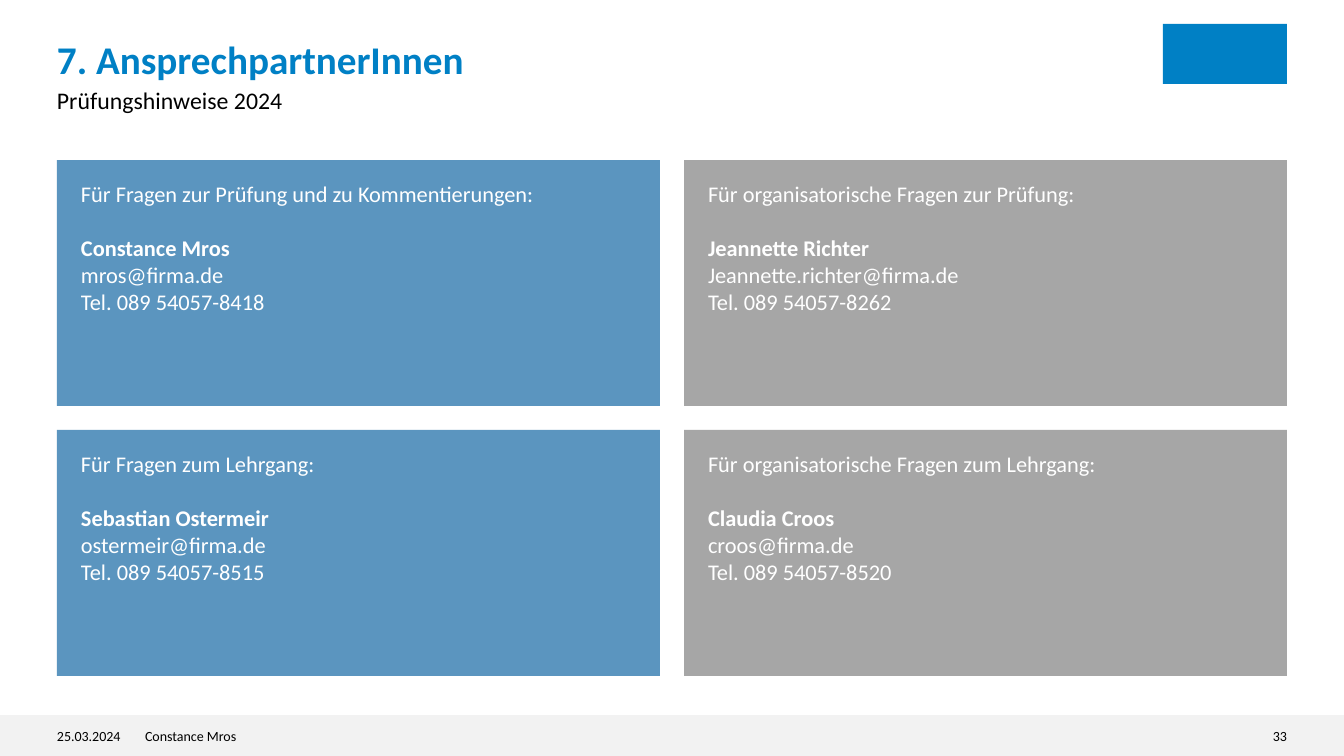
from pptx import Presentation
from pptx import util as u
from pptx.dml.color import RGBColor
from pptx.enum import shapes, text

PX = 12192000 / 1344  # EMU per px
LEFT, RIGHT = 57, 1287
BLUE, CARD_BLUE, CARD_GREY = "0080C5", "5B95BF", "A6A6A6"
CARD_WIDTH, CARD_HEIGHT, CARD_GAP, CARD_TOP = 603, 246, 24, 160

# Two columns per row: heading, name, mail, phone
CONTACTS = [
    [("Für Fragen zur Prüfung und zu Kommentierungen:", "Constance Mros",
      "mros@firma.de", "Tel. 089 54057-8418"),
     ("Für organisatorische Fragen zur Prüfung:", "Jeannette Richter",
      "Jeannette.richter@firma.de", "Tel. 089 54057-8262")],
    [("Für Fragen zum Lehrgang:", "Sebastian Ostermeir",
      "ostermeir@firma.de", "Tel. 089 54057-8515"),
     ("Für organisatorische Fragen zum Lehrgang:", "Claudia Croos",
      "croos@firma.de", "Tel. 089 54057-8520")],
]


def px(*lengths):
    return [u.Emu(round(length * PX)) for length in lengths]


def color(code):
    return RGBColor.from_string(code)


def set_frame(shape, side=0, top=0):
    side, top = px(side, top)
    values = {"margin_left": side, "margin_right": side,
              "margin_top": top, "margin_bottom": top, "word_wrap": True,
              "auto_size": text.MSO_AUTO_SIZE.NONE,
              "vertical_anchor": text.MSO_ANCHOR.TOP}
    for name, value in values.items():
        setattr(shape.text_frame, name, value)


def write(para, words, size, ink="000000", bold=False, **layout):
    span = para.add_run()
    span.text = words
    span.font.color.rgb = color(ink)
    for name, value in {"name": "Calibri", "size": u.Pt(size), "bold": bold}.items():
        setattr(span.font, name, value)
    for name, value in {"alignment": text.PP_ALIGN.LEFT, **layout}.items():
        setattr(para, name, value)


def add_title(page, words):
    title = page.shapes.title
    title.left, title.top, title.width, title.height = px(LEFT, 41, 1033, 43)
    set_frame(title)
    write(title.text_frame.paragraphs[0], words, 28, BLUE, True, line_spacing=0.9)


def add_label(page, place, words, size, **layout):
    box = page.shapes.add_textbox(*px(*place))
    set_frame(box)
    write(box.text_frame.paragraphs[0], words, size, **layout)


def add_block(page, place, fill):
    block = page.shapes.add_shape(shapes.MSO_SHAPE.RECTANGLE, *px(*place))
    block.shadow.inherit = False
    block.fill.solid()
    block.fill.fore_color.rgb = color(fill)
    block.line.fill.background()
    return block


def add_card(page, row, column, contact):
    left = LEFT + column * (CARD_WIDTH + CARD_GAP)
    top = CARD_TOP + row * (CARD_HEIGHT + CARD_GAP)
    fill = (CARD_BLUE, CARD_GREY)[column]
    card = add_block(page, (left, top, CARD_WIDTH, CARD_HEIGHT), fill)
    set_frame(card, 24, 20)
    for index, words in enumerate(contact):
        frame = card.text_frame
        para = frame.add_paragraph() if index else frame.paragraphs[0]
        # The heading stands one line above the name
        write(para, words, 16, "FFFFFF", bold=index == 1,
              space_after=u.Pt(0 if index else 19.5))


def main():
    deck = Presentation()
    deck.slide_width, deck.slide_height = px(1344, 756)
    page = deck.slides.add_slide(deck.slide_layouts[5])

    # Header with a plain emblem
    add_block(page, (1163, 24, 124, 60), BLUE)
    add_title(page, "7. AnsprechpartnerInnen")
    add_label(page, (LEFT, 89, 1033, 48), "Prüfungshinweise 2024", 17, line_spacing=0.9)

    # Contact cards
    for row, contacts in enumerate(CONTACTS):
        for column, contact in enumerate(contacts):
            add_card(page, row, column, contact)

    # Footer
    add_block(page, (0, 715, 1344, 41), "F2F2F2")
    add_label(page, (LEFT, 728, 70, 17), "25.03.2024", 10)
    add_label(page, (145, 728, 515, 17), "Constance Mros", 10)
    add_label(page, (RIGHT - 27, 728, 27, 17), "33", 10, alignment=text.PP_ALIGN.RIGHT)

    deck.save("out.pptx")


if __name__ == "__main__":
    main()
